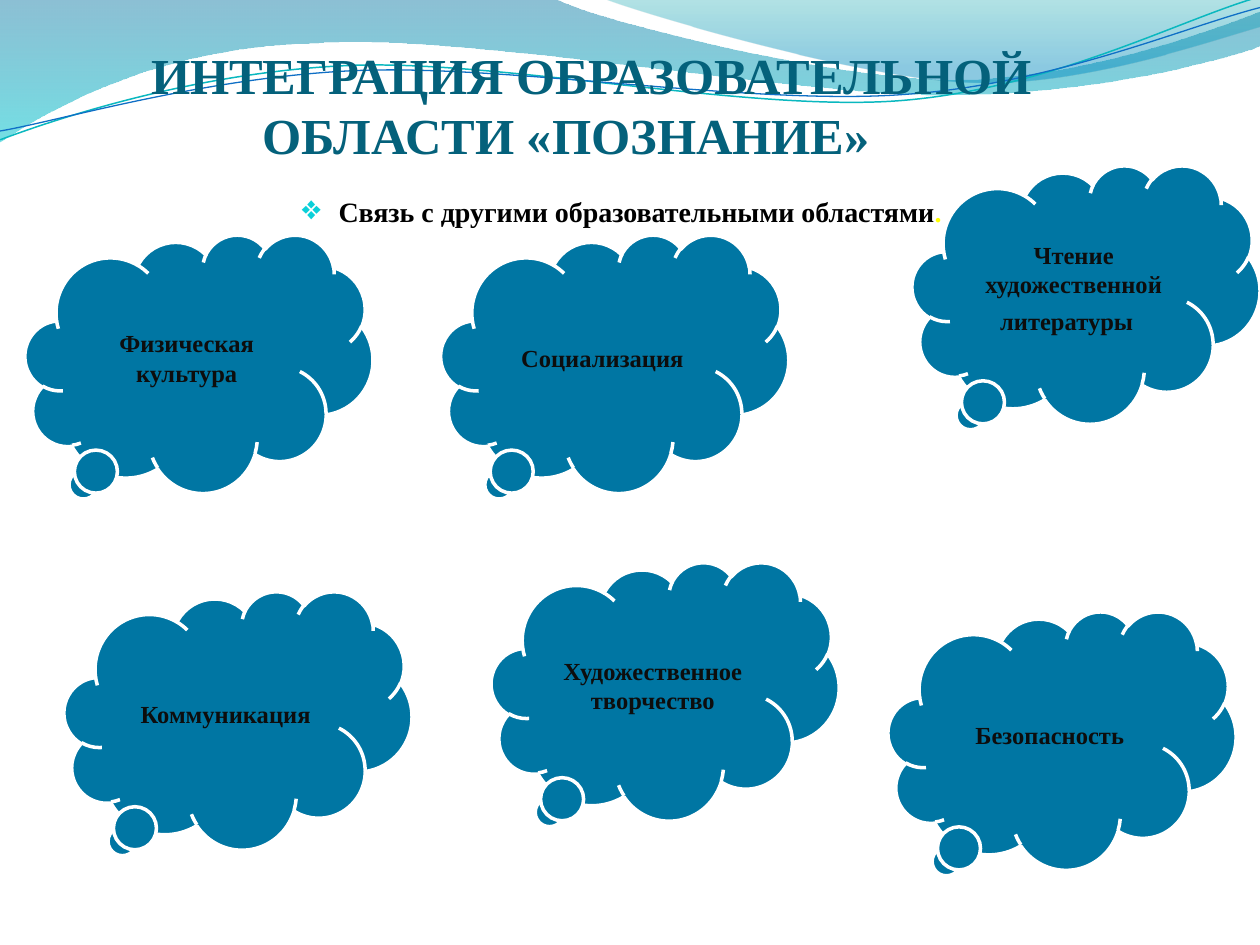
import math

import pptx
import pptx.dml.color
import pptx.enum.shapes
import pptx.enum.text
import pptx.oxml
import pptx.oxml.ns
import pptx.util

Inches = pptx.util.Inches
RGBColor = pptx.dml.color.RGBColor
ALIGN = pptx.enum.text.PP_ALIGN
ANCHOR = pptx.enum.text.MSO_ANCHOR
qn = pptx.oxml.ns.qn
NS = pptx.oxml.ns.nsdecls("a")

FONT = "Times New Roman"
TITLE_COLOR = RGBColor(0x04, 0x61, 0x7B)
BLACK = RGBColor(0, 0, 0)
YELLOW = RGBColor(0xFF, 0xFF, 0)
WHITE = RGBColor(0xFF, 0xFF, 0xFF)
CLOUD_FILL = RGBColor(0x00, 0x76, 0xA3)
CLOUD_TEXT = RGBColor(0x0D, 0x0D, 0x0D)
TEAL_LINE = RGBColor(0x0A, 0xB8, 0xBF)
BLUE_LINE = RGBColor(0x0F, 0x6F, 0xC6)
BULLET_COLOR = RGBColor(0x0B, 0xD0, 0xD9)

# Gradient stops: position, colour, opacity in percent
BAND_STOPS = [(0, RGBColor(0x00, 0x74, 0xA1), 45), (1, RGBColor(0x00, 0xC6, 0xCF), 55)]
CORNER_STOPS = [(0, RGBColor(0x00, 0xA1, 0xA9), 30), (0.8, RGBColor(0x00, 0x8B, 0xBF), 45)]

# Wave outlines: a pair is a straight step, six numbers are a Bezier step
BAND = [(0, 0), (4.4, -0.01), (4.76, 0.17, 6.64, 0.63, 7.58, 0.63),
        (8.53, 0.63, 9.58, 0.26, 10, 0.09), (10.01, 0.36),
        (9.83, 0.44, 8.7, 0.76, 7.46, 0.75), (6.22, 0.75, 3.82, 0.28, 2.57, 0.34),
        (1.29, 0.36, 0.46, 0.83, -0.01, 1.13)]
CORNER = [(4.79, -0.01), (5.09, 0.11, 6.82, 0.62, 7.69, 0.65),
          (8.56, 0.69, 9.61, 0.32, 10, 0.21), (10, 0)]
TEAL_WAVE = [(0, 1.11), (0.48, 0.93, 1.58, 0.57, 2.77, 0.52),
             (3.95, 0.47, 5.93, 0.89, 7.13, 0.8), (8.33, 0.71, 9.38, 0.15, 9.98, -0.02)]
BLUE_WAVE = [(0, 1.04), (0.47, 0.96, 1.64, 0.61, 2.83, 0.56),
             (4.03, 0.51, 5.97, 0.84, 7.17, 0.75), (8.36, 0.67, 9.41, 0.21, 10, 0.06)]
WAVE_CENTER = (4.99, 0.58)
WAVE_TILT = -2.7

# Clouds: left, top, text
CLOUDS = [(7.05, 4.85, "Безопасность"),
          (3.9, 4.46, "Художественное творчество"),
          (0.51, 4.69, "Коммуникация"),
          (3.5, 1.86, "Социализация"),
          (7.24, 1.31, "Чтение художественной литературы "),
          (0.2, 1.86, "Физическая культура")]


def add_run(p, text, size=14, color=CLOUD_TEXT, bold=True):
    r = p.add_run()
    r.text = text
    r.font.name = FONT
    r.font.size = pptx.util.Pt(size)
    r.font.bold = bold
    r.font.color.rgb = color
    return r


def untilt(step):
    """Turn the points of a step back around the centre of the line waves."""
    cx, cy = WAVE_CENTER
    angle = math.radians(-WAVE_TILT)
    cos, sin = math.cos(angle), math.sin(angle)
    turned = []
    for x, y in zip(step[::2], step[1::2]):
        turned += [cx + (x - cx) * cos - (y - cy) * sin,
                   cy + (x - cx) * sin + (y - cy) * cos]
    return tuple(turned)


def add_wave(slide, steps, close):
    """Build the outline from end points, then bend its Bezier steps."""
    ends = [(Inches(s[-2]), Inches(s[-1])) for s in steps]
    builder = slide.shapes.build_freeform(*ends[0])
    builder.add_line_segments(ends[1:], close=close)
    sp = builder.convert_to_shape()
    sp.shadow.inherit = False
    for step, line in zip(steps[1:], list(sp.element.iter(qn("a:lnTo")))):
        if len(step) == 6:
            pts = "".join(f'<a:pt x="{Inches(x) - sp.left}" y="{Inches(y) - sp.top}"/>'
                          for x, y in zip(step[::2], step[1::2]))
            curve = pptx.oxml.parse_xml(f"<a:cubicBezTo {NS}>{pts}</a:cubicBezTo>")
            line.getparent().replace(line, curve)
    return sp


def add_gradient_wave(slide, steps, stops):
    sp = add_wave(slide, steps, True)
    sp.line.fill.background()
    sp.fill.gradient()
    sp.fill.gradient_angle = 270
    for stop, (position, color, _) in zip(sp.fill.gradient_stops, stops):
        stop.position = position
        stop.color.rgb = color
    # Opacity of each stop
    for clr, (_, _, opacity) in zip(sp.element.iter(qn("a:srgbClr")), stops):
        clr.append(pptx.oxml.parse_xml(f'<a:alpha {NS} val="{opacity * 1000}"/>'))


def add_line_wave(slide, steps, color, width):
    sp = add_wave(slide, [untilt(s) for s in steps], False)
    sp.rotation = WAVE_TILT
    sp.fill.background()
    sp.line.color.rgb = color
    sp.line.width = pptx.util.Pt(width)


def place(sp, left, top, width, height, anchor):
    """Move a placeholder to its place, in front of what is drawn so far."""
    sp.left, sp.top, sp.width, sp.height = map(Inches, (left, top, width, height))
    sp.element.getparent().append(sp.element)
    tf = sp.text_frame
    tf.word_wrap = True
    tf.auto_size = pptx.enum.text.MSO_AUTO_SIZE.NONE
    tf.vertical_anchor = anchor
    tf.paragraphs[0].alignment = ALIGN.CENTER
    return tf


def set_indent(p, left=0, first=0, right=0):
    pPr = p._p.get_or_add_pPr()
    for name, value in (("marL", left), ("marR", right), ("indent", first)):
        pPr.set(name, str(Inches(value)))
    return pPr


def set_bullet(p, char):
    pPr = set_indent(p, left=0.3, first=-0.3)
    for xml in (f'<a:buClr {NS}><a:srgbClr val="{BULLET_COLOR}"/></a:buClr>',
                f'<a:buSzPct {NS} val="95000"/>',
                f'<a:buFont {NS} typeface="{FONT}"/>',
                f'<a:buChar {NS} char="{char}"/>'):
        pPr.append(pptx.oxml.parse_xml(xml))


def add_title(slide):
    tf = place(slide.shapes.title, 0.21, 0.25, 8.77, 1.06, ANCHOR.BOTTOM)
    tf.margin_left = tf.margin_right = tf.margin_bottom = 0
    tf.margin_top = Inches(0.05)
    p = tf.paragraphs[0]
    set_indent(p, first=0.4, right=0.2)
    add_run(p, "ИНТЕГРАЦИЯ ОБРАЗОВАТЕЛЬНОЙ ОБЛАСТИ «ПОЗНАНИЕ»", size=28.8, color=TITLE_COLOR)


def add_subtitle(slide):
    tf = place(slide.placeholders[1], 0.43, 1.15, 9, 6.08, ANCHOR.TOP)
    tf.margin_top = Inches(0.39)
    p = tf.paragraphs[0]
    p.space_before = pptx.util.Pt(0)
    set_bullet(p, "❖")
    add_run(p, "Связь с другими образовательными областями", size=16, color=BLACK)
    add_run(p, ".", size=16, color=YELLOW)


def add_cloud(slide, left, top, text):
    sp = slide.shapes.add_shape(pptx.enum.shapes.MSO_SHAPE.CLOUD_CALLOUT,
                                Inches(left), Inches(top), Inches(2.76), Inches(2.05))
    sp.adjustments[0], sp.adjustments[1] = -0.34, 0.48
    sp.shadow.inherit = False
    sp.fill.solid()
    sp.fill.fore_color.rgb = CLOUD_FILL
    sp.line.color.rgb = WHITE
    sp.line.width = pptx.util.Pt(2)
    tf = sp.text_frame
    tf.word_wrap = True
    tf.vertical_anchor = ANCHOR.MIDDLE
    p = tf.paragraphs[0]
    p.alignment = ALIGN.CENTER
    add_run(p, text)
    # A larger closing space makes the last line taller
    if text.endswith(" "):
        add_run(p, " ", size=18, bold=False)


def main():
    prs = pptx.Presentation()
    prs.slide_width, prs.slide_height = Inches(10), Inches(7.5)
    slide = prs.slides.add_slide(prs.slide_layouts[1])

    # Waves along the top
    add_gradient_wave(slide, BAND, BAND_STOPS)
    add_gradient_wave(slide, CORNER, CORNER_STOPS)
    add_line_wave(slide, TEAL_WAVE, TEAL_LINE, 0.85)
    add_line_wave(slide, BLUE_WAVE, BLUE_LINE, 0.75)

    # Heading and bullet
    add_title(slide)
    add_subtitle(slide)

    # Related areas
    for left, top, text in CLOUDS:
        add_cloud(slide, left, top, text)

    prs.save("out.pptx")


if __name__ == "__main__":
    main()
